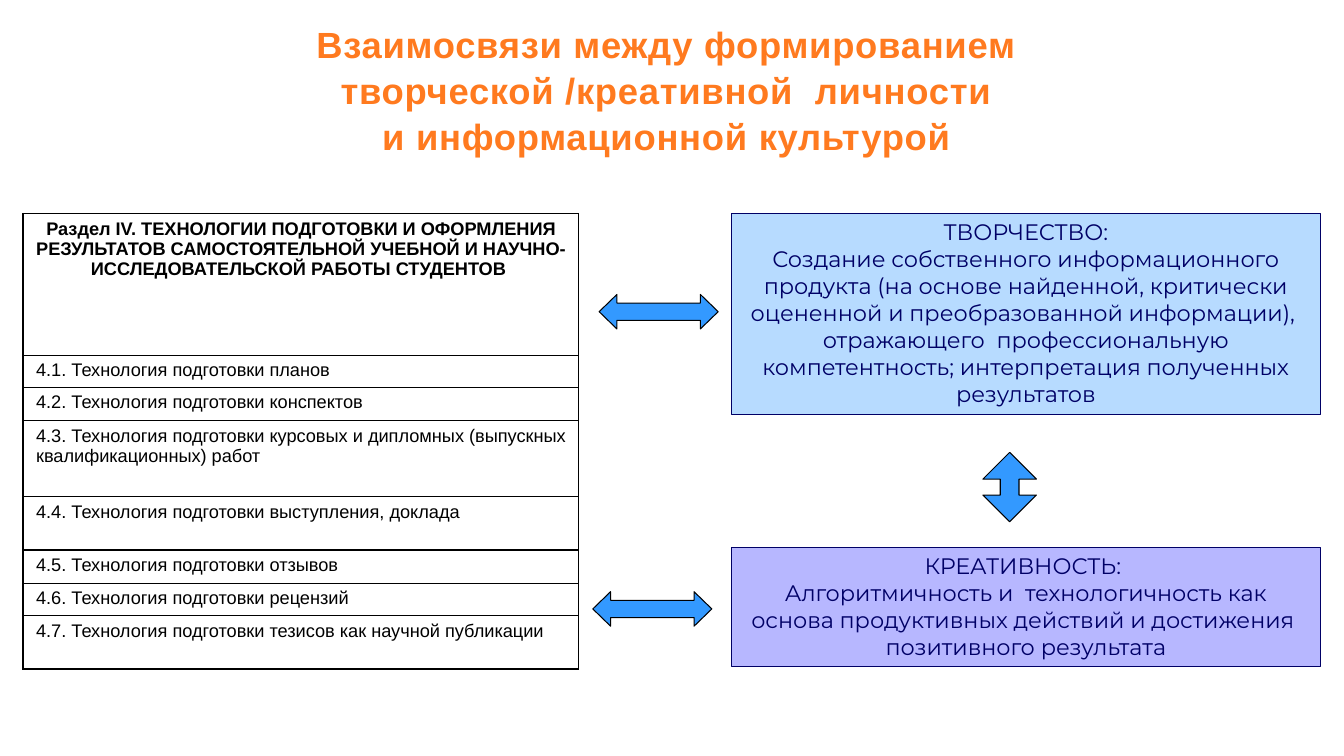
from lxml.etree import SubElement
from pptx import Presentation
from pptx.dml.color import RGBColor
from pptx.enum.shapes import MSO_SHAPE as Shape
from pptx.enum.text import MSO_ANCHOR as Anchor, PP_ALIGN as Align
from pptx.oxml.ns import qn
from pptx.util import Cm, Pt

COLORS = {
    "title": "FF7A1F", "black": "000000", "white": "FFFFFF", "navy": "000066",
    "sky": "99CCFF", "violet": "9999FF", "arrow": "3399FF",
}
TITLE = ("Взаимосвязи между формированием \n"
         "творческой /креативной  личности \n"
         "и информационной культурой ")
# Section heading and topics, each with its row height in cm
SECTION = [
    ("Раздел IV. ТЕХНОЛОГИИ ПОДГОТОВКИ И ОФОРМЛЕНИЯ\nРЕЗУЛЬТАТОВ САМОСТОЯТЕЛЬНОЙ "
     "УЧЕБНОЙ И НАУЧНО-ИССЛЕДОВАТЕЛЬСКОЙ РАБОТЫ СТУДЕНТОВ ", 3.57),
    ("4.1. Технология подготовки планов", 0.81),
    ("4.2. Технология подготовки конспектов", 0.84),
    ("4.3. Технология подготовки курсовых и дипломных "
     "(выпускных квалификационных) работ", 1.91),
    ("4.4. Технология подготовки выступления, доклада", 1.35),
    ("4.5. Технология подготовки отзывов", 0.84),
    ("4.6. Технология подготовки рецензий", 0.81),
    ("4.7. Технология подготовки тезисов как научной публикации", 1.35),
]
# Paragraphs, fill, top and height in cm
CONCEPTS = [
    (["ТВОРЧЕСТВО:",
      "Создание собственного информационного продукта (на основе найденной, "
      "критически оцененной и преобразованной информации),  отражающего  "
      "профессиональную компетентность; интерпретация полученных результатов"],
     "sky", 5.38, 5.06),
    (["КРЕАТИВНОСТЬ: ",
      "Алгоритмичность и  технологичность как основа продуктивных действий "
      "и достижения  позитивного результата"],
     "violet", 13.79, 3.0),
]
# Preset, left, top, width, height in cm, adjustments
ARROWS = [
    (Shape.LEFT_RIGHT_ARROW, 15.1, 7.42, 3.0, 0.87, (0.5, 0.515)),
    (Shape.LEFT_RIGHT_ARROW, 14.94, 14.91, 3.0, 0.87, (0.5, 0.515)),
    (Shape.UP_DOWN_ARROW, 24.77, 11.4, 1.35, 1.75, (0.5, 0.35)),
]
SLIDE_W, SLIDE_H = 33.87, 19.05
TABLE_LEFT, TABLE_TOP, TABLE_W = 0.58, 5.38, 14.0
CONCEPT_LEFT, CONCEPT_W = 18.44, 14.83
TITLE_FONT = {"name": "Arial", "size": Pt(26), "bold": True}
HEAD_FONT = {"name": "Arial", "size": Pt(13), "bold": True}
TOPIC_FONT = {**HEAD_FONT, "bold": False}
CONCEPT_FONT = {"name": "Montserrat", "size": Pt(16)}
CELL_FORMAT = {
    "margin_left": Cm(0.33), "margin_right": Cm(0.33),
    "margin_top": Cm(0.13), "margin_bottom": Cm(0.13),
    "vertical_anchor": Anchor.TOP,
}


def apply(target, values):
    for name, value in values.items():
        setattr(target, name, value)


def paint(fill, color, opacity=100):
    """Solid fill with an opacity in percent."""
    fill.solid()
    fill.fore_color.rgb = RGBColor.from_string(COLORS[color])
    if opacity < 100:
        srgb = fill._xPr.find(qn("a:solidFill"))[0]
        SubElement(srgb, qn("a:alpha"), val=str(opacity * 1000))


def write(frame, paragraphs, font, color, align):
    """Fill a text frame; a newline inside a paragraph is a line break."""
    frame.word_wrap = True
    for index, text in enumerate(paragraphs):
        para = frame.add_paragraph() if index else frame.paragraphs[0]
        para.text = text
        para.alignment = align
        for run in para.runs:
            apply(run.font, font)
            run.font.color.rgb = RGBColor.from_string(COLORS[color])


def border(cell):
    props = cell._tc.get_or_add_tcPr()
    for index, side in enumerate(("lnL", "lnR", "lnT", "lnB")):
        line = props.makeelement(qn(f"a:{side}"), {"w": str(Pt(1))})
        solid = SubElement(line, qn("a:solidFill"))
        SubElement(solid, qn("a:srgbClr"), val=COLORS["black"])
        props.insert(index, line)


def add_outlined(slide, preset, box, fill, line, opacity=100):
    shape = slide.shapes.add_shape(preset, *map(Cm, box))
    shape.shadow.inherit = False
    paint(shape.fill, fill, opacity)
    paint(shape.line.fill, line)
    shape.line.width = Pt(0.75)
    return shape


def add_section(slide):
    total = sum(height for _, height in SECTION)
    table = slide.shapes.add_table(
        len(SECTION), 1, Cm(TABLE_LEFT), Cm(TABLE_TOP), Cm(TABLE_W), Cm(total)).table
    apply(table, {"first_row": False, "horz_banding": False})
    for index, (text, height) in enumerate(SECTION):
        table.rows[index].height = Cm(height)
        cell = table.cell(index, 0)
        apply(cell, CELL_FORMAT)
        paint(cell.fill, "white", 50)
        border(cell)
        font, align = (TOPIC_FONT, Align.LEFT) if index else (HEAD_FONT, Align.CENTER)
        write(cell.text_frame, [text], font, "black", align)


def add_title(slide):
    frame = slide.shapes.add_textbox(Cm(0), Cm(0.38), Cm(SLIDE_W), Cm(3.58)).text_frame
    write(frame, [TITLE], TITLE_FONT, "title", Align.CENTER)
    heading = frame.paragraphs[0]
    heading.line_spacing = 1.05
    for run in heading.runs:
        run.font._element.set("spc", "50")


def main():
    deck = Presentation()
    apply(deck, {"slide_width": Cm(SLIDE_W), "slide_height": Cm(SLIDE_H)})
    slide = deck.slides.add_slide(deck.slide_layouts[6])
    add_section(slide)
    for paragraphs, fill, top, height in CONCEPTS:
        concept = add_outlined(slide, Shape.RECTANGLE,
                               (CONCEPT_LEFT, top, CONCEPT_W, height), fill, "navy", 70)
        concept.text_frame.vertical_anchor = Anchor.TOP
        write(concept.text_frame, paragraphs, CONCEPT_FONT, "navy", Align.CENTER)
    for preset, *box, adjustments in ARROWS:
        arrow = add_outlined(slide, preset, box, "arrow", "black")
        for index, value in enumerate(adjustments):
            arrow.adjustments[index] = value
    add_title(slide)
    deck.save("out.pptx")


if __name__ == "__main__":
    main()
